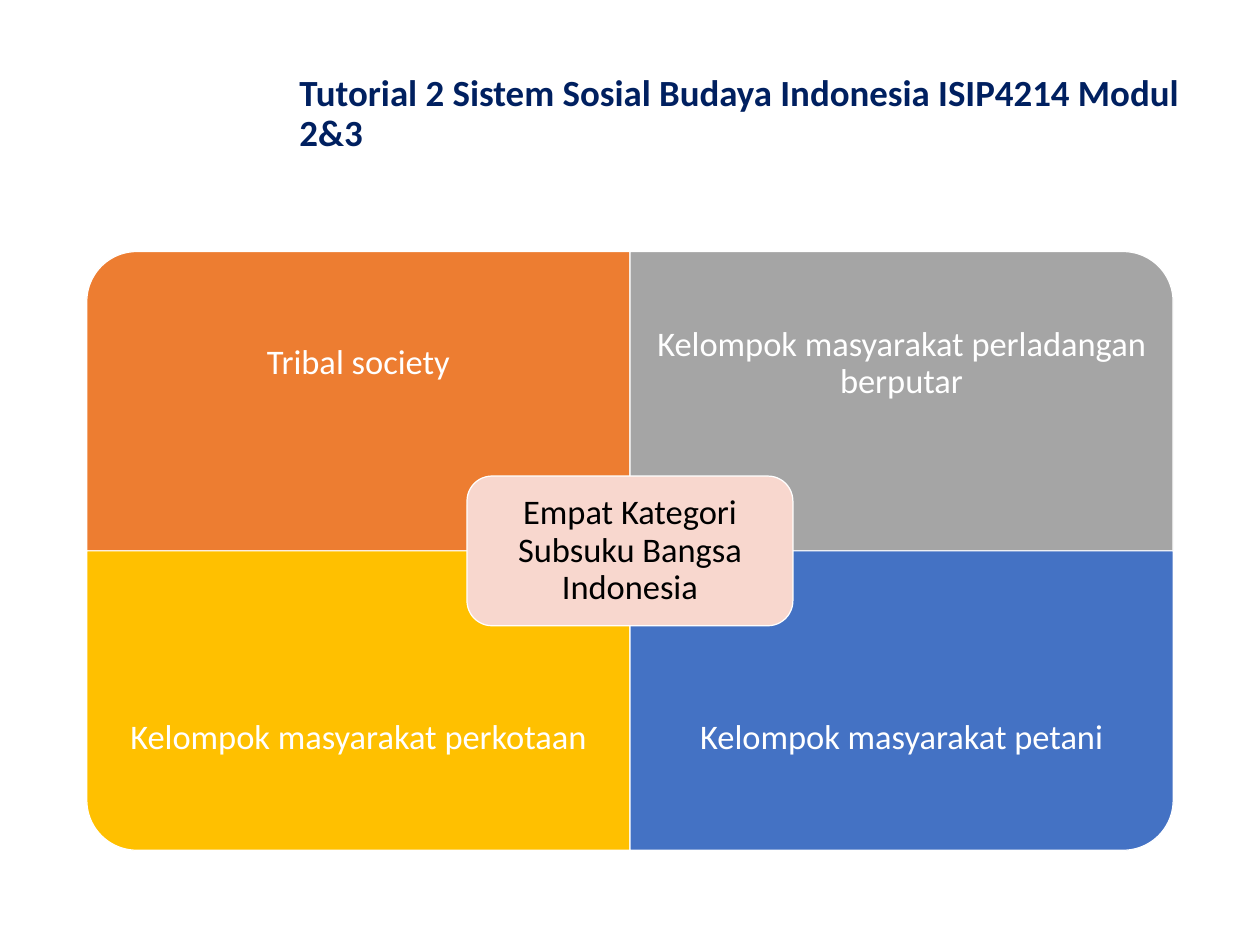
from pptx import Presentation
from pptx.dml.color import RGBColor
from pptx.enum.shapes import MSO_SHAPE
from pptx.enum.text import MSO_ANCHOR, MSO_AUTO_SIZE, PP_ALIGN
from pptx.util import Inches, Pt

TITLE = "Tutorial 2 Sistem Sosial Budaya Indonesia ISIP4214 Modul 2&3"
CENTRE = "Empat Kategori Subsuku Bangsa Indonesia"
QUADRANTS = [
    ("Tribal society", "orange", 0, 0, 270),
    ("Kelompok masyarakat perladangan berputar", "grey", 1, 0, 0),
    ("Kelompok masyarakat perkotaan", "yellow", 0, 1, 180),
    ("Kelompok masyarakat petani", "blue", 1, 1, 90),
]
COLOURS = {
    "orange": "ED7D31",
    "grey": "A5A5A5",
    "yellow": "FFC000",
    "blue": "4472C4",
    "peach": "F8D7CE",
    "navy": "002060",
    "white": "FFFFFF",
    "black": "000000",
}
FONT = "Calibri"
LEFT, TOP = 0.98, 2.84
WIDTH, HEIGHT = 6.13, 3.38
LABEL_HEIGHT = HEIGHT * 0.75
CENTRE_WIDTH, CENTRE_HEIGHT = WIDTH * 0.6, HEIGHT / 2


def colour(name):
    return RGBColor.from_string(COLOURS[name])


def write(shape, text, size, ink, align, inset=None, bold=False):
    frame = shape.text_frame
    frame.text = text
    frame.word_wrap = True
    frame.auto_size = MSO_AUTO_SIZE.NONE
    frame.vertical_anchor = MSO_ANCHOR.MIDDLE
    if inset is not None:
        frame.margin_left = frame.margin_right = Inches(inset)
        frame.margin_top = frame.margin_bottom = Inches(inset)
    para = frame.paragraphs[0]
    para.alignment = align
    para.line_spacing = 0.9
    para.space_before = Pt(0)
    font = para.runs[0].font
    font.name = FONT
    font.size = Pt(size)
    font.bold = bold
    font.color.rgb = colour(ink)


def add_panel(page, kind, centre_x, centre_y, width, height, fill, rotation=0):
    if rotation in (90, 270):
        width, height = height, width
    panel = page.shapes.add_shape(
        kind, Inches(centre_x - width / 2), Inches(centre_y - height / 2),
        Inches(width), Inches(height))
    panel.rotation = rotation
    panel.shadow.inherit = False
    panel.fill.solid()
    panel.fill.fore_color.rgb = colour(fill)
    panel.line.color.rgb = colour("white")
    panel.line.width = Pt(1)
    return panel


def add_quadrant(page, text, fill, column, row, rotation):
    left, top = LEFT + column * WIDTH, TOP + row * HEIGHT
    add_panel(page, MSO_SHAPE.ROUND_1_RECTANGLE, left + WIDTH / 2,
              top + HEIGHT / 2, WIDTH, HEIGHT, fill, rotation)
    label_top = top + row * (HEIGHT - LABEL_HEIGHT)
    label = page.shapes.add_textbox(
        Inches(left), Inches(label_top), Inches(WIDTH), Inches(LABEL_HEIGHT))
    write(label, text, 28, "white", PP_ALIGN.CENTER, 0.22)


def main():
    deck = Presentation()
    deck.slide_width, deck.slide_height = Inches(14.22), Inches(10.67)
    page = deck.slides.add_slide(deck.slide_layouts[5])

    title = page.shapes.title
    title.left, title.top = Inches(3.28), Inches(0.67)
    title.width, title.height = Inches(10.9), Inches(1.25)
    write(title, TITLE, 30, "navy", PP_ALIGN.LEFT, bold=True)

    for quadrant in QUADRANTS:
        add_quadrant(page, *quadrant)

    hub = add_panel(page, MSO_SHAPE.ROUNDED_RECTANGLE, LEFT + WIDTH,
                    TOP + HEIGHT, CENTRE_WIDTH, CENTRE_HEIGHT, "peach")
    write(hub, CENTRE, 28, "black", PP_ALIGN.CENTER, 0.12)

    deck.save("out.pptx")


if __name__ == "__main__":
    main()
